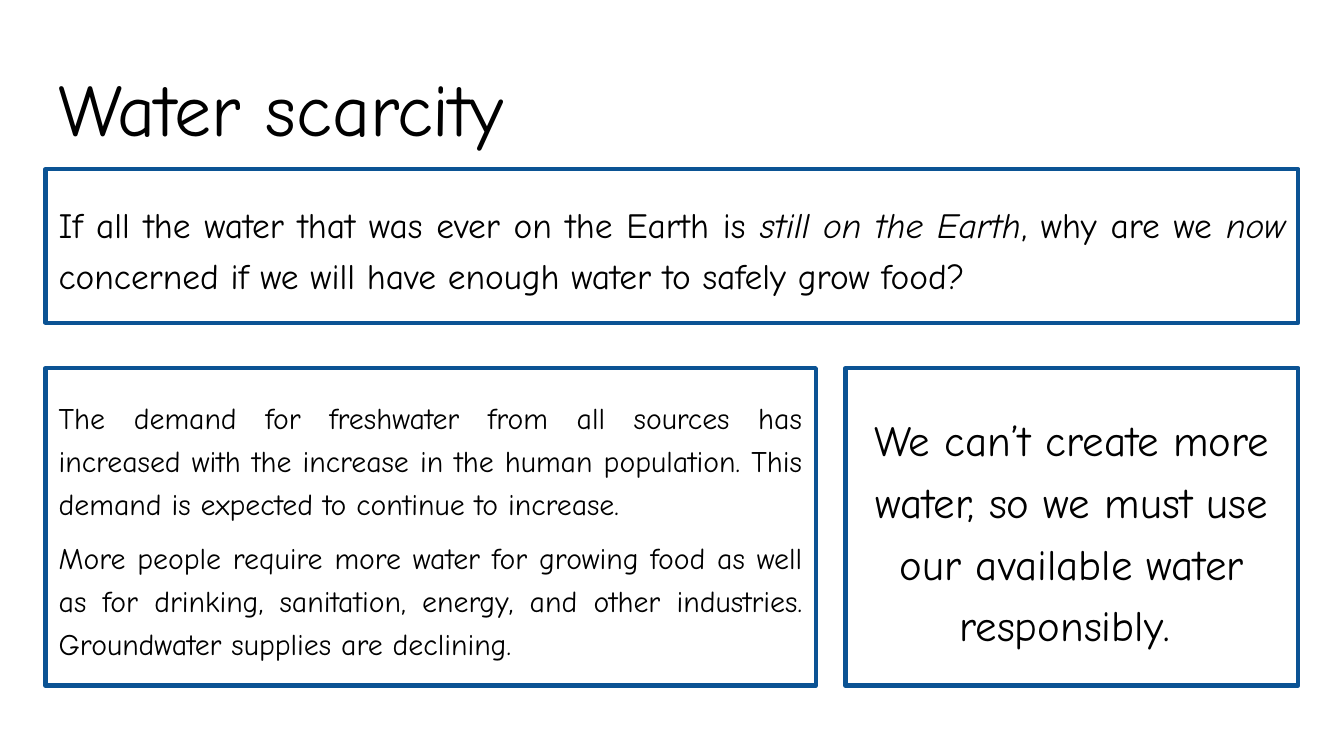
from lxml import etree
from pptx import Presentation
from pptx import util as u
from pptx.dml.color import RGBColor
from pptx.enum import shapes, text
from pptx.oxml.ns import qn

FONT = "Comic Neue"
BLACK, BLUE = "000000", "0B5394"
LEFT, RIGHT = 0.86, 24.54
GAP, SPLIT = 0.56, 15.42
PAD = 0.25


def color(code):
    return RGBColor.from_string(code)


def write(shape, *paras, size, align="LEFT", anchor="MIDDLE", lead=1.2,
          before=6, after=6):
    """Fill a shape with paragraphs; words between asterisks are italic."""
    frame = shape.text_frame
    frame.word_wrap = True
    frame.vertical_anchor = text.MSO_ANCHOR[anchor]
    frame.margin_left = frame.margin_right = u.Cm(PAD)
    frame.margin_top = frame.margin_bottom = u.Cm(PAD)
    for i, words in enumerate(paras):
        para = frame.add_paragraph() if i else frame.paragraphs[0]
        para.alignment = text.PP_ALIGN[align]
        para.line_spacing = lead
        para.space_before = u.Pt(before)
        para.space_after = u.Pt(after if i == len(paras) - 1 else 0)
        for j, part in enumerate(words.split("*")):
            run = para.add_run()
            run.text = part
            run.font.name = FONT
            run.font.size = u.Pt(size)
            run.font.italic = j % 2 == 1
            run.font.color.rgb = color(BLACK)


def panel(slide, x, y, w, h):
    """Draw an unfilled box with a blue, round-cornered outline."""
    box = slide.shapes.add_shape(shapes.MSO_SHAPE.RECTANGLE,
                                 u.Cm(x), u.Cm(y), u.Cm(w), u.Cm(h))
    box.shadow.inherit = False
    box.fill.background()
    box.line.color.rgb = color(BLUE)
    box.line.width = u.Pt(2.25)
    etree.SubElement(box.element.spPr.find(qn("a:ln")), qn("a:round"))
    return box


def main():
    deck = Presentation()
    deck.slide_width, deck.slide_height = u.Cm(25.4), u.Cm(14.29)
    slide = deck.slides.add_slide(deck.slide_layouts[6])
    wide = RIGHT - LEFT

    title = slide.shapes.add_textbox(u.Cm(LEFT), u.Cm(0.94),
                                     u.Cm(wide), u.Cm(1.6))
    write(title, "Water scarcity", size=39.6, anchor="TOP", lead=1,
          before=0, after=0)

    write(panel(slide, LEFT, 3.2, wide, 2.9),
          "If all the water that was ever on the Earth is *still on the "
          "Earth*, why are we *now* concerned if we will have enough water "
          "to safely grow food?",
          size=19, align="JUSTIFY")

    top, tall = 6.96, 6
    write(panel(slide, LEFT, top, SPLIT - LEFT, tall),
          "The demand for freshwater from all sources has increased with the "
          "increase in the human population. This demand is expected to "
          "continue to increase.",
          "More people require more water for growing food as well as for "
          "drinking, sanitation, energy, and other industries. Groundwater "
          "supplies are declining.",
          size=16, align="JUSTIFY")

    right = SPLIT + GAP
    write(panel(slide, right, top, RIGHT - right, tall),
          "We can’t create more water, so we must use our available water "
          "responsibly. ",
          size=23, align="CENTER")

    deck.save("out.pptx")


if __name__ == "__main__":
    main()
